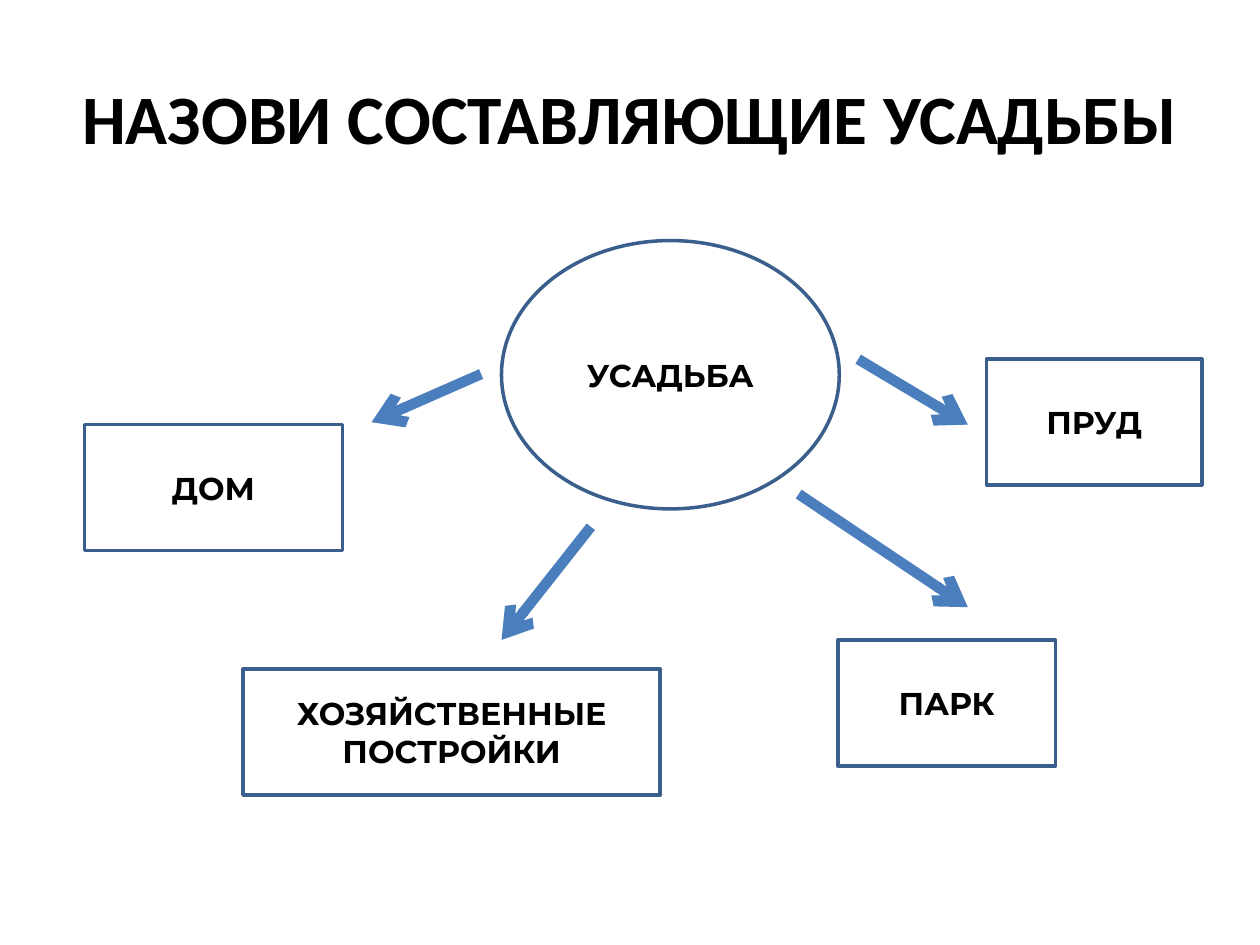
from dataclasses import dataclass

from lxml import etree
from pptx import Presentation
from pptx.dml.color import RGBColor
from pptx.enum.shapes import MSO_CONNECTOR, MSO_SHAPE
from pptx.enum.text import MSO_ANCHOR, PP_ALIGN
from pptx.oxml.ns import qn
from pptx.slide import Slide
from pptx.text.text import TextFrame
from pptx.util import Cm, Pt

RECTANGLE, ELLIPSE = MSO_SHAPE.RECTANGLE, MSO_SHAPE.OVAL
STRAIGHT = MSO_CONNECTOR.STRAIGHT
MIDDLE, CENTER = MSO_ANCHOR.MIDDLE, PP_ALIGN.CENTER


@dataclass(frozen=True)
class Theme:
    text: RGBColor = RGBColor(0x00, 0x00, 0x00)
    outline: RGBColor = RGBColor(0x3A, 0x5F, 0x8C)
    arrow: RGBColor = RGBColor(0x4B, 0x7E, 0xBC)
    title_font: str = "Calibri"
    label_font: str = "Montserrat"
    title_size: float = 39.6
    label_size: float = 18
    outline_width: float = 2
    arrow_width: float = 6


@dataclass(frozen=True)
class Node:
    """A labelled shape, measured in centimetres."""
    label: str
    left: float
    top: float
    width: float
    height: float = 2.54
    kind: MSO_SHAPE = RECTANGLE


@dataclass(frozen=True)
class Arrow:
    """An arrow between two points, measured in centimetres."""
    start: tuple[float, float]
    end: tuple[float, float]


THEME = Theme()

NODES = [
    Node("УСАДЬБА", 10.11, 4.85, 6.81, 5.41, ELLIPSE),
    Node("ДОМ", 1.7, 8.56, 5.21),
    Node("ХОЗЯЙСТВЕННЫЕ ПОСТРОЙКИ", 4.9, 13.49, 8.41),
    Node("ПАРК", 16.89, 12.9, 4.39),
    Node("ПРУД", 19.89, 7.24, 4.34),
]

ARROWS = [
    Arrow((9.7, 7.54), (7.49, 8.51)),
    Arrow((11.91, 10.62), (10.11, 12.9)),
    Arrow((16.1, 9.96), (19.51, 12.24)),
    Arrow((17.3, 7.24), (19.51, 8.56)),
]


def write_text(frame: TextFrame, text: str, font: str, size: float) -> None:
    frame.word_wrap = True
    frame.vertical_anchor = MIDDLE
    paragraph = frame.paragraphs[0]
    paragraph.alignment = CENTER
    run = paragraph.add_run()
    run.text = text
    run.font.name = font
    run.font.size = Pt(size)
    run.font.bold = True
    run.font.color.rgb = THEME.text


def add_title(slide: Slide, text: str) -> None:
    box = slide.shapes.add_textbox(Cm(1.27), Cm(0.76), Cm(22.86), Cm(3.18))
    write_text(box.text_frame, text, THEME.title_font, THEME.title_size)


def add_node(slide: Slide, node: Node) -> None:
    shape = slide.shapes.add_shape(
        node.kind, Cm(node.left), Cm(node.top), Cm(node.width), Cm(node.height))
    shape.shadow.inherit = False
    shape.fill.background()
    shape.line.color.rgb = THEME.outline
    shape.line.width = Pt(THEME.outline_width)
    write_text(shape.text_frame, node.label, THEME.label_font, THEME.label_size)


def add_arrow(slide: Slide, arrow: Arrow) -> None:
    connector = slide.shapes.add_connector(
        STRAIGHT, *(Cm(value) for value in arrow.start + arrow.end))
    connector.line.color.rgb = THEME.arrow
    connector.line.width = Pt(THEME.arrow_width)
    # Arrowhead at the end, and no shadow
    line = connector.line._get_or_add_ln()
    etree.SubElement(line, qn("a:tailEnd"), type="arrow")
    etree.SubElement(connector._element.spPr, qn("a:effectLst"))


def main() -> None:
    presentation = Presentation()
    presentation.slide_width, presentation.slide_height = Cm(25.4), Cm(19.05)
    slide = presentation.slides.add_slide(presentation.slide_layouts[6])

    # Heading
    add_title(slide, "НАЗОВИ СОСТАВЛЯЮЩИЕ УСАДЬБЫ")

    # The estate and its parts
    for node in NODES:
        add_node(slide, node)

    # Arrows from the estate to each part
    for arrow in ARROWS:
        add_arrow(slide, arrow)

    presentation.save("out.pptx")


if __name__ == "__main__":
    main()
